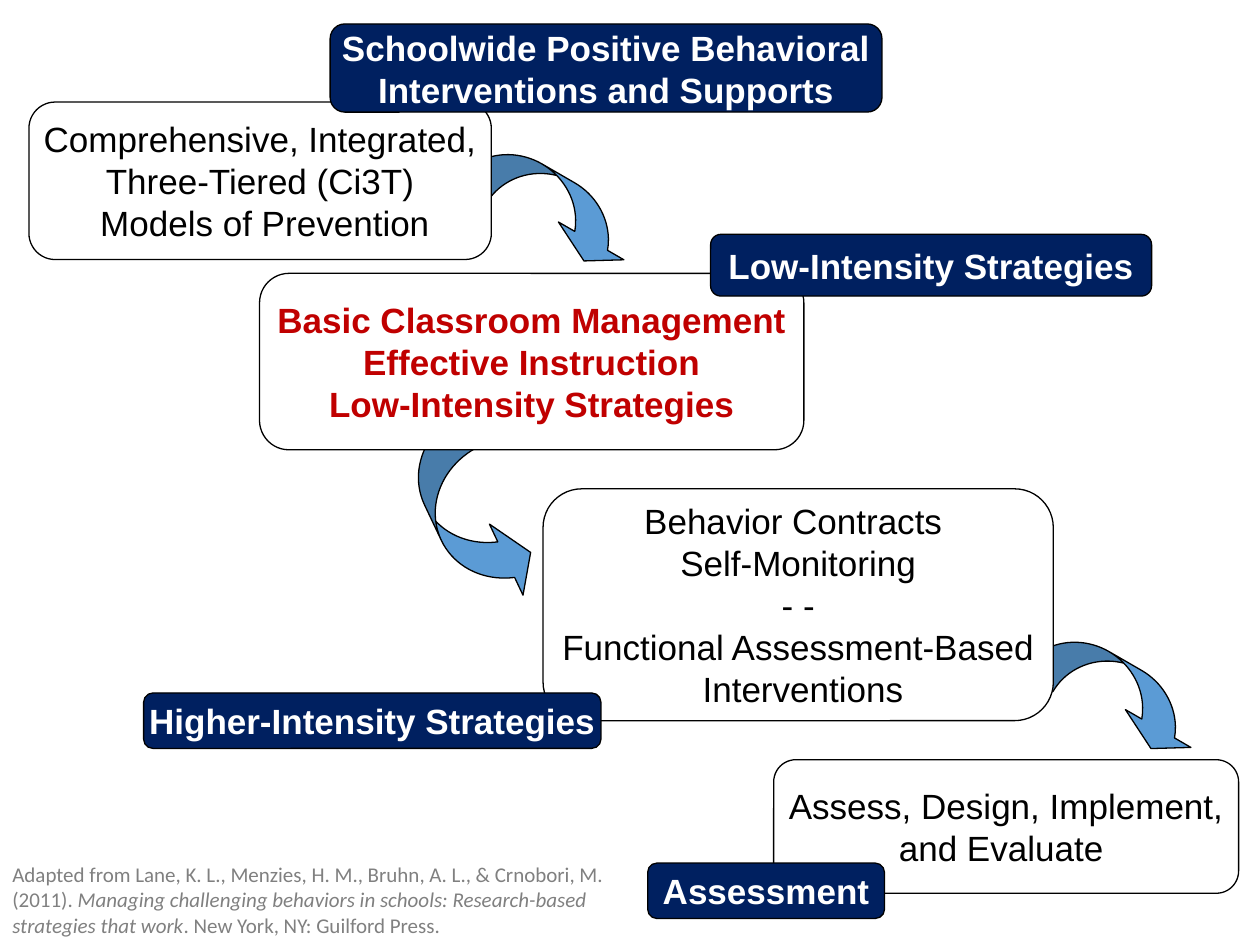
from pptx import Presentation
from pptx.dml.color import RGBColor
from pptx.enum.shapes import MSO_SHAPE
from pptx.enum.text import MSO_ANCHOR, PP_ALIGN
from pptx.util import Inches, Pt


def rgb(value):
    return RGBColor.from_string(value)


def add_outlined(shape_type, box, fill):
    sp = s.shapes.add_shape(shape_type, *[Inches(v) for v in box])
    sp.shadow.inherit = False
    sp.fill.solid()
    sp.fill.fore_color.rgb = rgb(fill)
    sp.line.color.rgb = rgb("000000")
    sp.line.width = Pt(0.75)
    return sp


prs = Presentation()
prs.slide_width = Inches(10)
prs.slide_height = Inches(7.5)
s = prs.slides.add_slide(prs.slide_layouts[6])

# Curved arrows between the steps
DOWN, UP = MSO_SHAPE.CURVED_DOWN_ARROW, MSO_SHAPE.CURVED_UP_ARROW
arrows = [
    (DOWN, (3.62, 1.38, 1.5, 0.5), 30, (0.6, 1.2, 0.333)),
    (UP, (2.96, 3.79, 1.56, 0.6), 64.7, (0.52, 1.04, 0.333)),
    (DOWN, (8.12, 5.25, 1.5, 0.5), 30, (0.6, 1.2, 0.333)),
]
for shape_type, box, rotation, adjustments in arrows:
    sp = add_outlined(shape_type, box, "5B9BD5")
    sp.rotation = rotation
    for i, value in enumerate(adjustments):
        sp.adjustments[i] = value

# White step boxes, then the navy labels that overlap them
WHITE, NAVY, BLACK, RED = "FFFFFF", "002060", "000000", "C00000"
boxes = [
    ((0.23, 0.81, 3.67, 1.25), WHITE, BLACK, False,
     ["Comprehensive, Integrated,", "Three-Tiered (Ci3T)",
      " Models of Prevention"]),
    ((6.14, 6.03, 3.69, 1.06), WHITE, BLACK, False,
     ["Assess, Design, Implement,", "and Evaluate "]),
    ((2.06, 2.17, 4.32, 1.4), WHITE, RED, True,
     ["Basic Classroom Management", "Effective Instruction",
      "Low-Intensity Strategies"]),
    ((4.31, 3.88, 4.05, 1.84), WHITE, BLACK, False,
     ["Behavior Contracts ", "Self-Monitoring", "- -",
      "Functional Assessment-Based", " Interventions"]),
    ((2.62, 0.19, 4.38, 0.7), NAVY, WHITE, True,
     ["Schoolwide Positive Behavioral", "Interventions and Supports"]),
    ((5.64, 1.86, 3.5, 0.49), NAVY, WHITE, True,
     ["Low-Intensity Strategies"]),
    ((1.14, 5.5, 3.63, 0.44), NAVY, WHITE, True,
     ["Higher-Intensity Strategies"]),
    ((5.14, 6.85, 1.88, 0.44), NAVY, WHITE, True, ["Assessment"]),
]
for box, fill, color, bold, lines in boxes:
    sp = add_outlined(MSO_SHAPE.ROUNDED_RECTANGLE, box, fill)
    tf = sp.text_frame
    tf.word_wrap = False
    tf.vertical_anchor = MSO_ANCHOR.MIDDLE
    tf.text = "\n".join(lines)
    for p in tf.paragraphs:
        p.alignment = PP_ALIGN.CENTER
        for r in p.runs:
            r.font.name = "Arial"
            r.font.size = Pt(20)
            r.font.bold = bold
            r.font.color.rgb = rgb(color)

# Source citation
sp = s.shapes.add_textbox(Inches(0), Inches(6.79), Inches(5), Inches(0.71))
tf = sp.text_frame
tf.word_wrap = True
p = tf.paragraphs[0]
citation = [
    ("Adapted from Lane, K. L., Menzies, H. M., Bruhn, A. L., & Crnobori, M. "
     "(2011). ", False),
    ("Managing challenging behaviors in schools: Research-based strategies "
     "that work", True),
    (". New York, NY: Guilford Press.", False),
]
for text, italic in citation:
    r = p.add_run()
    r.text = text
    r.font.name = "Calibri"
    r.font.size = Pt(12)
    r.font.italic = italic
    r.font.color.rgb = rgb("808080")

prs.save("out.pptx")
